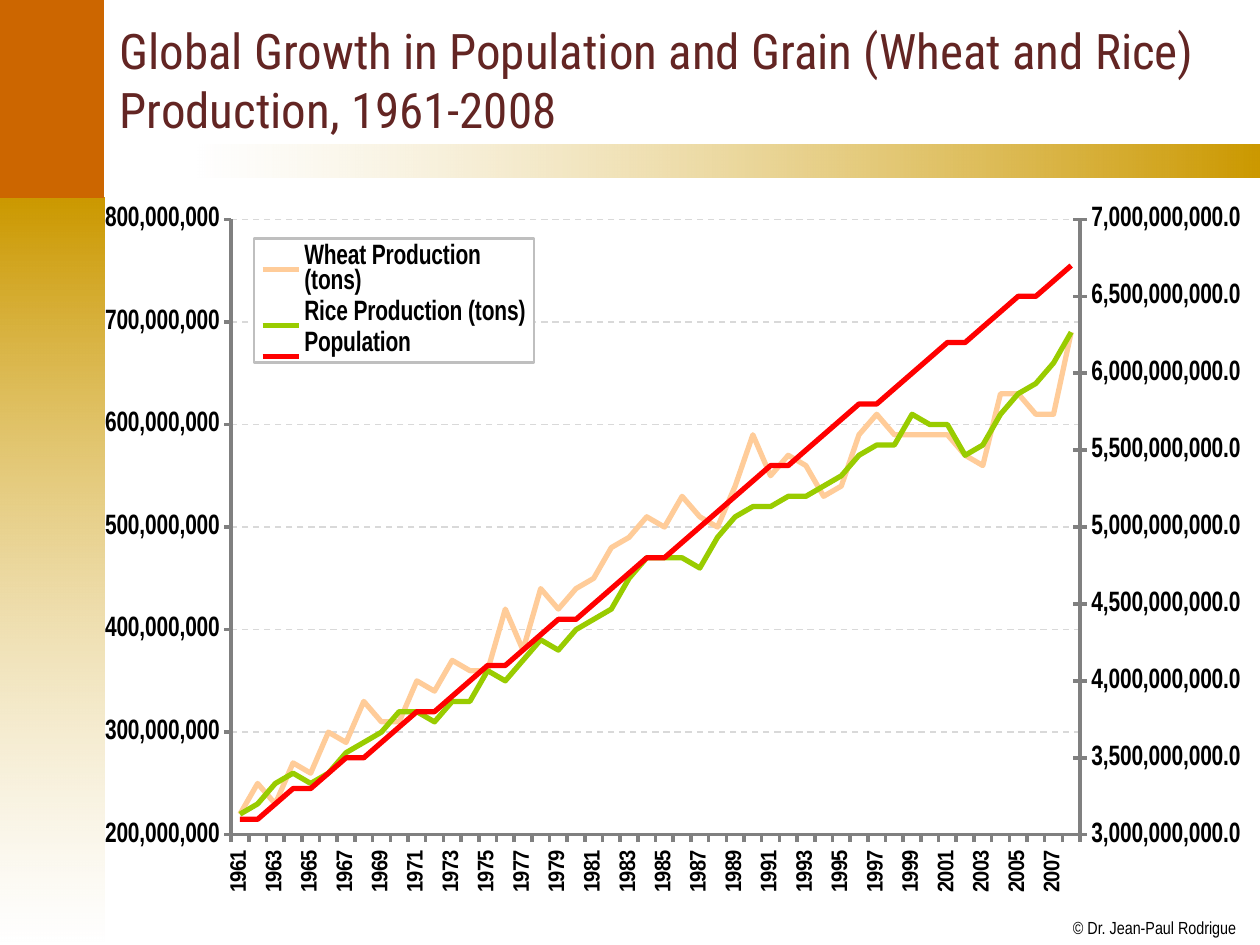
from copy import deepcopy

from lxml import etree
from pptx import Presentation
from pptx.chart.data import CategoryChartData
from pptx.dml.color import RGBColor
from pptx.enum.chart import XL_CHART_TYPE, XL_LEGEND_POSITION, XL_MARKER_STYLE, XL_TICK_MARK
from pptx.enum.dml import MSO_LINE
from pptx.enum.shapes import MSO_SHAPE
from pptx.enum.text import MSO_ANCHOR, PP_ALIGN
from pptx.oxml import parse_xml
from pptx.oxml.ns import nsdecls, qn
from pptx.util import Emu, Pt

LINE, NO_MARKER = XL_CHART_TYPE.LINE, XL_MARKER_STYLE.NONE
OUTSIDE, NO_TICK = XL_TICK_MARK.OUTSIDE, XL_TICK_MARK.NONE
RIGHT, DASH, RECTANGLE = XL_LEGEND_POSITION.RIGHT, MSO_LINE.DASH, MSO_SHAPE.RECTANGLE
MIDDLE, LEFT = MSO_ANCHOR.MIDDLE, PP_ALIGN.LEFT
PX = 914400 // 126

COLORS = {
    "orange": "CC6600", "gold": "CC9900", "white": "FFFFFF", "black": "000000",
    "title": "632523", "axis": "808080", "grid": "D9D9D9", "frame": "BFBFBF",
    "wheat": "FFCC99", "rice": "99CC00", "people": "FF0000",
}
TITLE = "Global Growth in Population and Grain (Wheat and Rice) Production, 1961-2008"
CREDIT = "© Dr. Jean-Paul Rodrigue"
YEARS = range(1961, 2009)
MILLION = 10**6
SERIES = [
    ("Wheat Production (tons)", "wheat", 10 * MILLION, [
        22, 25, 23, 27, 26, 30, 29, 33, 31, 31, 35, 34, 37, 36, 36, 42,
        38, 44, 42, 44, 45, 48, 49, 51, 50, 53, 51, 50, 54, 59, 55, 57,
        56, 53, 54, 59, 61, 59, 59, 59, 59, 57, 56, 63, 63, 61, 61, 69]),
    ("Rice Production (tons)", "rice", 10 * MILLION, [
        22, 23, 25, 26, 25, 26, 28, 29, 30, 32, 32, 31, 33, 33, 36, 35,
        37, 39, 38, 40, 41, 42, 45, 47, 47, 47, 46, 49, 51, 52, 52, 53,
        53, 54, 55, 57, 58, 58, 61, 60, 60, 57, 58, 61, 63, 64, 66, 69]),
    ("Population", "people", 100 * MILLION, [
        31, 31, 32, 33, 33, 34, 35, 35, 36, 37, 38, 38, 39, 40, 41, 41,
        42, 43, 44, 44, 45, 46, 47, 48, 48, 49, 50, 51, 52, 53, 54, 54,
        55, 56, 57, 58, 58, 59, 60, 61, 62, 62, 63, 64, 65, 65, 66, 67]),
]
BANDS = [
    ((-1, 198, 105, 744), 270, [("gold", 100), ("white", 51)]),
    ((198, 145, 1062, 33), 0, [("white", 50), ("gold", 100)]),
    ((-1, -1, 105, 199), None, [("orange", 100)]),
]
TITLE_BOX = (107, 14, 1131, 131)
CREDIT_BOX = (1073, 917, 164, 21)
CHART_BOX = (105, 180, 1137, 730)
PLOT_LAYOUT = (0.098, 0.054, 0.818, 0.843)
LEGEND_LAYOUT = (0.12, 0.08, 0.27, 0.17)
LEFT_SCALE = {"minimum_scale": 200 * MILLION, "maximum_scale": 800 * MILLION,
              "major_unit": 100 * MILLION}
RIGHT_SCALE = {"c:min": 3000 * MILLION, "c:max": 7000 * MILLION, "c:majorUnit": 500 * MILLION,
               "c:majorTickMark": "cross", "c:axPos": "r", "c:crosses": "max"}


def color(name):
    return RGBColor.from_string(COLORS[name])


def emu(box):
    return [Emu(value * PX) for value in box]


def set_all(target, values):
    for name, value in values.items():
        setattr(target, name, value)


def set_font(font, size, name="Arial Narrow", shade="black", bold=True):
    set_all(font, {"size": Pt(size), "name": name, "bold": bold})
    font.color.rgb = color(shade)


def set_line(line, shade, width):
    line.color.rgb = color(shade)
    line.width = Pt(width)


def add_band(slide, box, angle, stops):
    band = slide.shapes.add_shape(RECTANGLE, *emu(box))
    band.shadow.inherit = False
    band.line.fill.background()
    if angle is None:
        band.fill.solid()
        band.fill.fore_color.rgb = color(stops[0][0])
        return
    band.fill.gradient()
    band.fill.gradient_angle = angle
    for stop, (shade, _) in zip(band.fill.gradient_stops, stops):
        stop.color.rgb = color(shade)
    for node, (_, alpha) in zip(band._element.spPr.iter(qn("a:srgbClr")), stops):
        if alpha < 100:
            etree.SubElement(node, qn("a:alpha")).set("val", str(alpha * 1000))


def make_layout(box, inner=False):
    target = '<c:layoutTarget val="inner"/>' if inner else ""
    modes = "".join(f'<c:{side}Mode val="edge"/>' for side in "xy")
    sizes = "".join(f'<c:{side} val="{value}"/>' for side, value in zip("xywh", box))
    return parse_xml(f'<c:layout {nsdecls("c")}><c:manualLayout>{target}{modes}{sizes}'
                     "</c:manualLayout></c:layout>")


def drop(parent, tag):
    for node in parent.findall(qn(tag)):
        parent.remove(node)


def box_format(fill, frame=None):
    line = ""
    if frame:
        line = (f'<a:ln w="19050"><a:solidFill><a:srgbClr val="{COLORS[frame]}"/>'
                "</a:solidFill></a:ln>")
    return parse_xml(f'<c:spPr {nsdecls("c", "a")}><a:solidFill>'
                     f'<a:srgbClr val="{COLORS[fill]}"/></a:solidFill>{line}</c:spPr>')


def format_axes(chart):
    years, tons = chart.category_axis, chart.value_axis
    for axis, size in ((years, 14), (tons, 16)):
        set_all(axis, {"visible": True, "major_tick_mark": OUTSIDE, "minor_tick_mark": NO_TICK})
        set_line(axis.format.line, "axis", 2.2)
        set_font(axis.tick_labels.font, size)
    set_all(tons, LEFT_SCALE)
    set_all(tons.tick_labels, {"number_format": "#,##0", "number_format_is_linked": False})
    set_line(tons.major_gridlines.format.line, "grid", 1)
    tons.major_gridlines.format.line.dash_style = DASH
    years._element.find(qn("c:txPr")).find(qn("a:bodyPr")).set("rot", "-5400000")
    skip = parse_xml(f'<c:tickLblSkip {nsdecls("c")} val="2"/>')
    years._element.find(qn("c:noMultiLvlLbl")).addprevious(skip)


def add_right_axis(chart):
    years, tons = chart.category_axis._element, chart.value_axis._element
    left_lines = tons.getparent().find(qn("c:lineChart"))
    right_lines = deepcopy(left_lines)
    for node in right_lines.findall(qn("c:ser"))[:2]:
        right_lines.remove(node)
    left_lines.remove(left_lines.findall(qn("c:ser"))[2])
    left_lines.addnext(right_lines)
    hidden, people = deepcopy(years), deepcopy(tons)
    tons.addnext(people)
    people.addnext(hidden)
    for node, own, other in ((hidden, "5001", "5002"), (people, "5002", "5001")):
        node.find(qn("c:axId")).set("val", own)
        node.find(qn("c:crossAx")).set("val", other)
    for node, number in zip(right_lines.findall(qn("c:axId")), ("5001", "5002")):
        node.set("val", number)
    hidden.find(qn("c:delete")).set("val", "1")
    drop(people, "c:majorGridlines")
    people.find(qn("c:numFmt")).set("formatCode", "#,##0.0")
    for tag, value in RIGHT_SCALE.items():
        next(people.iter(qn(tag))).set("val", str(value))


def format_legend(chart):
    chart.has_legend = True
    legend = chart.legend
    set_all(legend, {"position": RIGHT, "include_in_layout": False})
    set_font(legend.font, 16)
    node = legend._element
    drop(node, "c:layout")
    node.find(qn("c:overlay")).addprevious(make_layout(LEGEND_LAYOUT))
    node.find(qn("c:txPr")).addprevious(box_format("white", "frame"))


def add_growth_chart(slide):
    data = CategoryChartData(number_format="#,##0")
    data.categories = [str(year) for year in YEARS]
    for name, _, unit, values in SERIES:
        data.add_series(name, [value * unit for value in values])
    chart = slide.shapes.add_chart(LINE, *emu(CHART_BOX), data).chart
    chart.has_title = False
    set_font(chart.font, 15.4)
    chart.plots[0].vary_by_categories = False
    for series, (_, shade, _, _) in zip(chart.plots[0].series, SERIES):
        series.smooth = False
        series.marker.style = NO_MARKER
        set_line(series.format.line, shade, 3.3)
    format_axes(chart)
    format_legend(chart)
    plot_area = chart.value_axis._element.getparent()
    add_right_axis(chart)
    drop(plot_area, "c:layout")
    plot_area.insert(0, make_layout(PLOT_LAYOUT, inner=True))
    plot_area.append(box_format("white"))


def main():
    deck = Presentation()
    deck.slide_width, deck.slide_height = emu((1260, 945))
    page = deck.slides.add_slide(deck.slide_layouts[5])
    for band in BANDS:
        add_band(page, *band)

    credit = page.shapes.add_textbox(*emu(CREDIT_BOX)).text_frame
    set_all(credit, {"margin_left": 0, "margin_top": 0, "margin_right": 0, "margin_bottom": 0,
                     "word_wrap": False, "text": CREDIT})
    set_font(credit.paragraphs[0].runs[0].font, 10, bold=False)

    title = page.shapes.title
    set_all(title, dict(zip(("left", "top", "width", "height"), emu(TITLE_BOX))))
    set_all(title.text_frame, {"text": TITLE, "vertical_anchor": MIDDLE, "word_wrap": True})
    para = title.text_frame.paragraphs[0]
    para.alignment = LEFT
    set_font(para.runs[0].font, 28, "Roboto Condensed", "title", False)

    add_growth_chart(page)
    deck.save("out.pptx")


if __name__ == "__main__":
    main()
